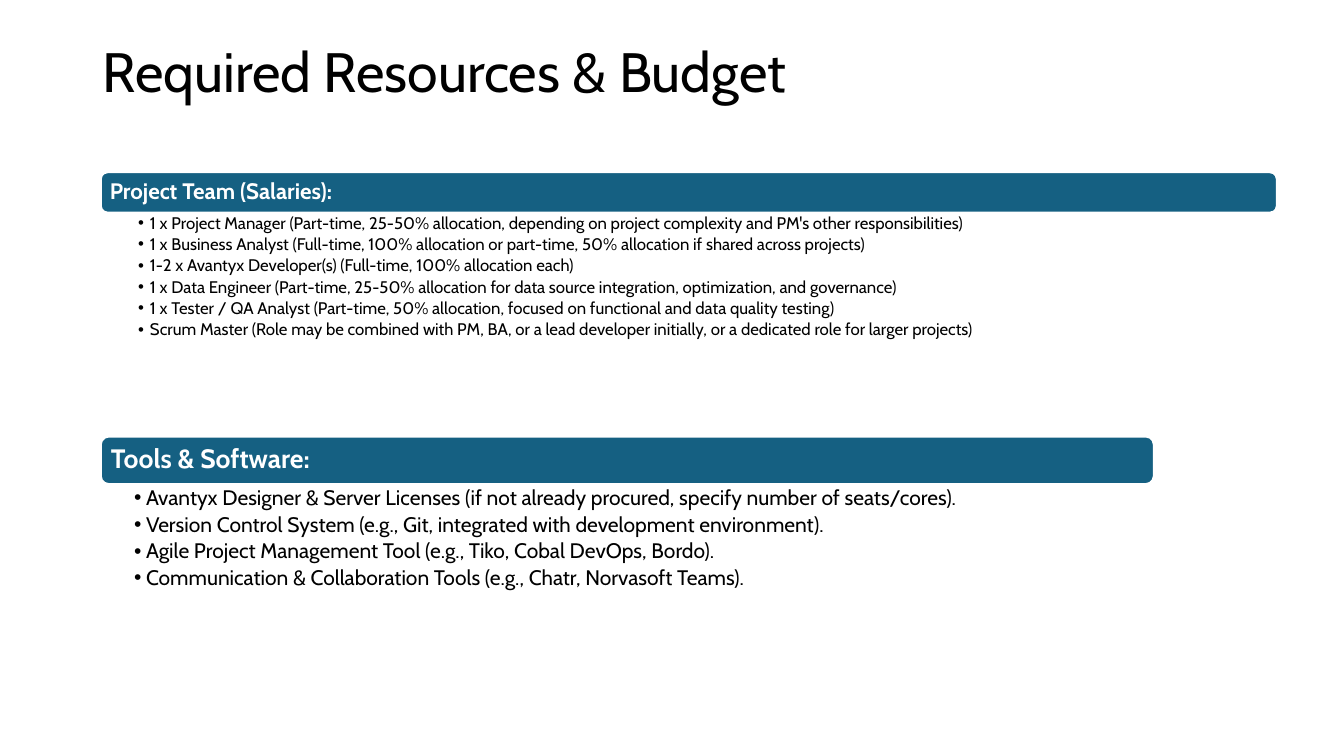
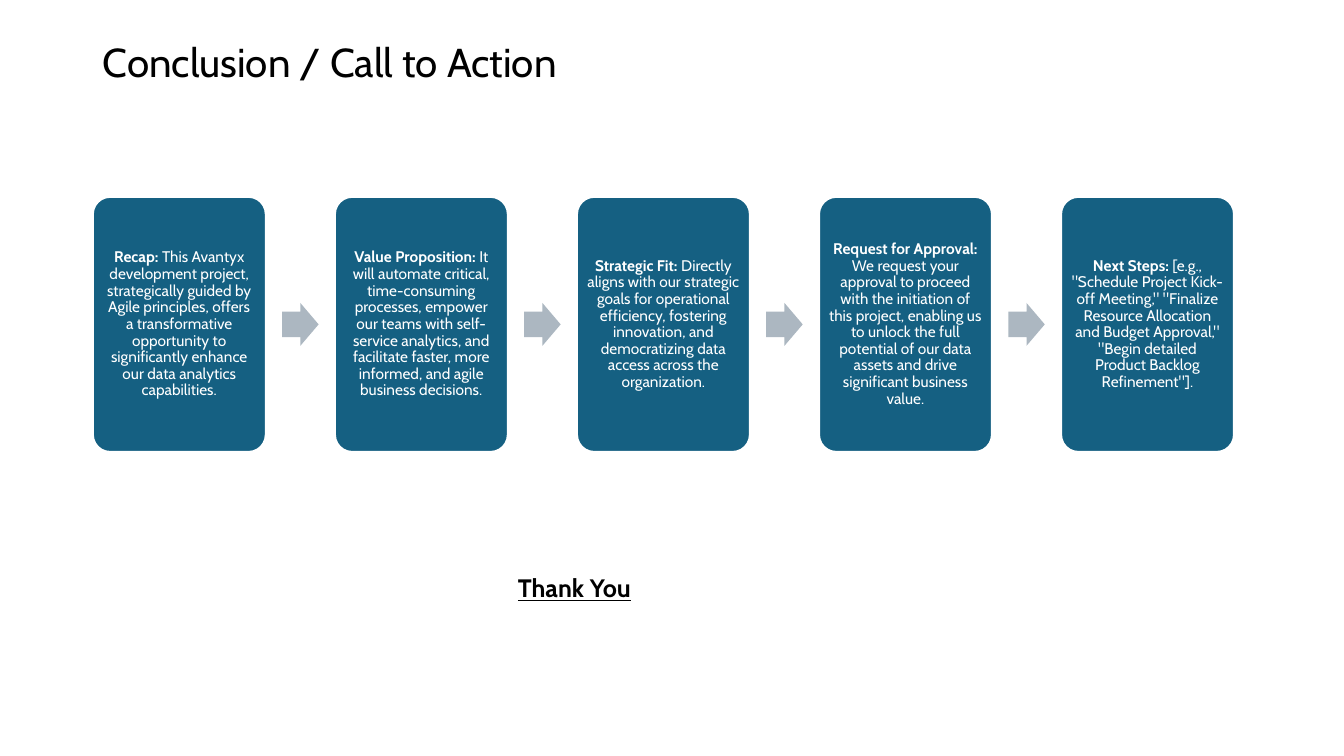
from pptx import Presentation
from pptx import util as u
from pptx.dml.color import RGBColor
from pptx.enum import shapes, text

FONT = "Cabin"
COLOURS = {"blue": "156082", "grey": "ACB7C1", "white": "FFFFFF", "black": "000000"}

BUDGET_TITLE = "Required Resources & Budget"
SECTIONS = [
    {
        "heading": "Project Team (Salaries):",
        "items": [
            "1 x Project Manager (Part-time, 25-50% allocation, depending on project complexity and PM's other responsibilities)",
            "1 x Business Analyst (Full-time, 100% allocation or part-time, 50% allocation if shared across projects)",
            "1-2 x Avantyx Developer(s) (Full-time, 100% allocation each)",
            "1 x Data Engineer (Part-time, 25-50% allocation for data source integration, optimization, and governance)",
            "1 x Tester / QA Analyst (Part-time, 50% allocation, focused on functional and data quality testing)",
            "Scrum Master (Role may be combined with PM, BA, or a lead developer initially, or a dedicated role for larger projects)",
        ],
        "top": 4.34, "width": 29.64, "band_height": 1.02, "list_height": 4.04,
        "heading_size": 16, "item_size": 12, "band_inset": 0.18,
        "list_insets": (0.94, 0.05, 0.3, 0.05),
    },
    {
        "heading": "Tools & Software:",
        "items": [
            "Avantyx Designer & Server Licenses (if not already procured, specify number of seats/cores).",
            "Version Control System (e.g., Git, integrated with development environment).",
            "Agile Project Management Tool (e.g., Tiko, Cobal DevOps, Bordo).",
            "Communication & Collaboration Tools (e.g., Chatr, Norvasoft Teams).",
        ],
        "top": 11, "width": 26.54, "band_height": 1.2, "list_height": 3.23,
        "heading_size": 19, "item_size": 15, "band_inset": 0.2,
        "list_insets": (0.84, 0.08, 0.38, 0.08),
    },
]
SECTION_LEFT = 2.54
BULLET_INDENT = 0.3

CONCLUSION_TITLE = "Conclusion / Call to Action"
STEPS = [
    ("Recap:", " This Avantyx development project, strategically guided by Agile principles, offers a transformative opportunity to significantly enhance our data analytics capabilities."),
    ("Value Proposition:", " It will automate critical, time-consuming processes, empower our teams with self-service analytics, and facilitate faster, more informed, and agile business decisions."),
    ("Strategic Fit:", " Directly aligns with our strategic goals for operational efficiency, fostering innovation, and democratizing data access across the organization."),
    ("Request for Approval:", " We request your approval to proceed with the initiation of this project, enabling us to unlock the full potential of our data assets and drive significant business value."),
    ("Next Steps:", ' [e.g., "Schedule Project Kick-off Meeting," "Finalize Resource Allocation and Budget Approval," "Begin detailed Product Backlog Refinement"].'),
]
CARD_LEFT, CARD_TOP, CARD_WIDTH, CARD_HEIGHT, CARD_STEP = 2.34, 4.96, 4.36, 6.43, 6.1
ARROW_WIDTH, ARROW_HEIGHT = 0.92, 1.08
CLOSING = "Thank You"


def colour(name):
    return RGBColor.from_string(COLOURS[name])


def style(span, size, ink, bold=False, underline=False):
    font = span.font
    font.name, font.size, font.bold, font.underline = FONT, u.Pt(size), bold, underline
    font.color.rgb = colour(ink)


def place(box, left, top, width, height):
    box.left, box.top, box.width, box.height = map(u.Cm, (left, top, width, height))


def set_frame(box, insets, anchor):
    frame = box.text_frame
    frame.word_wrap = True
    frame.auto_size = text.MSO_AUTO_SIZE.NONE
    frame.vertical_anchor = anchor
    frame.margin_left, frame.margin_top, frame.margin_right, frame.margin_bottom = map(u.Cm, insets)
    return frame


def add_title(page, wording, size, height):
    box = page.shapes.title
    place(box, 2.34, 1.02, 29.21, height)
    frame = set_frame(box, (0.25, 0, 0.25, 0), text.MSO_ANCHOR.MIDDLE)
    frame.text = wording
    para = frame.paragraphs[0]
    para.alignment, para.line_spacing = text.PP_ALIGN.LEFT, 0.9
    style(para.runs[0], size, "black")


def add_shape(page, kind, bounds, fill, outlined=False):
    shape = page.shapes.add_shape(kind, *map(u.Cm, bounds))
    shape.shadow.inherit = False
    shape.fill.solid()
    shape.fill.fore_color.rgb = colour(fill)
    if outlined:
        shape.line.color.rgb = colour("white")
        shape.line.width = u.Pt(1.5)
    else:
        shape.line.fill.background()
    return shape


def add_panel(page, bounds, spans, size, inset, alignment):
    panel = add_shape(page, shapes.MSO_SHAPE.ROUNDED_RECTANGLE, bounds, "blue", outlined=True)
    para = set_frame(panel, (inset,) * 4, text.MSO_ANCHOR.MIDDLE).paragraphs[0]
    para.alignment, para.line_spacing = alignment, 0.9
    for index, wording in enumerate(spans):
        span = para.add_run()
        span.text = wording
        style(span, size, "white", bold=index == 0)
    return panel


def fill_list(box, section):
    frame = set_frame(box, section["list_insets"], text.MSO_ANCHOR.TOP)
    frame.text = "\n".join(section["items"])
    size = section["item_size"]
    for para in frame.paragraphs:
        para.line_spacing = 0.9
        para.space_before, para.space_after = u.Pt(0), u.Pt(0.19 * size)
        properties = para._p.get_or_add_pPr()
        properties.set("marL", str(u.Cm(BULLET_INDENT)))
        properties.set("indent", str(-u.Cm(BULLET_INDENT)))
        style(para.runs[0], size, "black")


def build_budget(deck):
    page = deck.slides.add_slide(deck.slide_layouts[3])
    add_title(page, BUDGET_TITLE, 39.6, 1.73)
    for section, box in zip(SECTIONS, list(page.placeholders)[1:]):
        top, width, height = section["top"], section["width"], section["band_height"]
        add_panel(page, (SECTION_LEFT, top, width, height), [section["heading"]],
                  section["heading_size"], section["band_inset"], text.PP_ALIGN.LEFT)
        place(box, SECTION_LEFT, top + height, width, section["list_height"])
        fill_list(box, section)


def build_conclusion(deck):
    page = deck.slides.add_slide(deck.slide_layouts[5])
    add_title(page, CONCLUSION_TITLE, 28.8, 1.2)
    arrow_top = CARD_TOP + (CARD_HEIGHT - ARROW_HEIGHT) / 2
    arrow_offset = (CARD_WIDTH + CARD_STEP - ARROW_WIDTH) / 2
    for index, spans in enumerate(STEPS):
        left = CARD_LEFT + index * CARD_STEP
        card = add_panel(page, (left, CARD_TOP, CARD_WIDTH, CARD_HEIGHT), spans,
                         11, 0.13, text.PP_ALIGN.CENTER)
        card.adjustments[0] = 0.1
        if index < len(STEPS) - 1:
            arrow = add_shape(page, shapes.MSO_SHAPE.RIGHT_ARROW,
                              (left + arrow_offset, arrow_top, ARROW_WIDTH, ARROW_HEIGHT), "grey")
            arrow.adjustments[0] = 0.6
    box = page.shapes.add_textbox(*map(u.Cm, (12.8, 14.3, 4.57, 1.02)))
    frame = set_frame(box, (0.25, 0.13, 0.25, 0.13), text.MSO_ANCHOR.TOP)
    frame.text = CLOSING
    style(frame.paragraphs[0].runs[0], 18, "black", bold=True, underline=True)


def main():
    deck = Presentation()
    deck.slide_width, deck.slide_height = u.Cm(33.87), u.Cm(19.05)
    build_budget(deck)
    build_conclusion(deck)
    deck.save("out.pptx")


if __name__ == "__main__":
    main()
